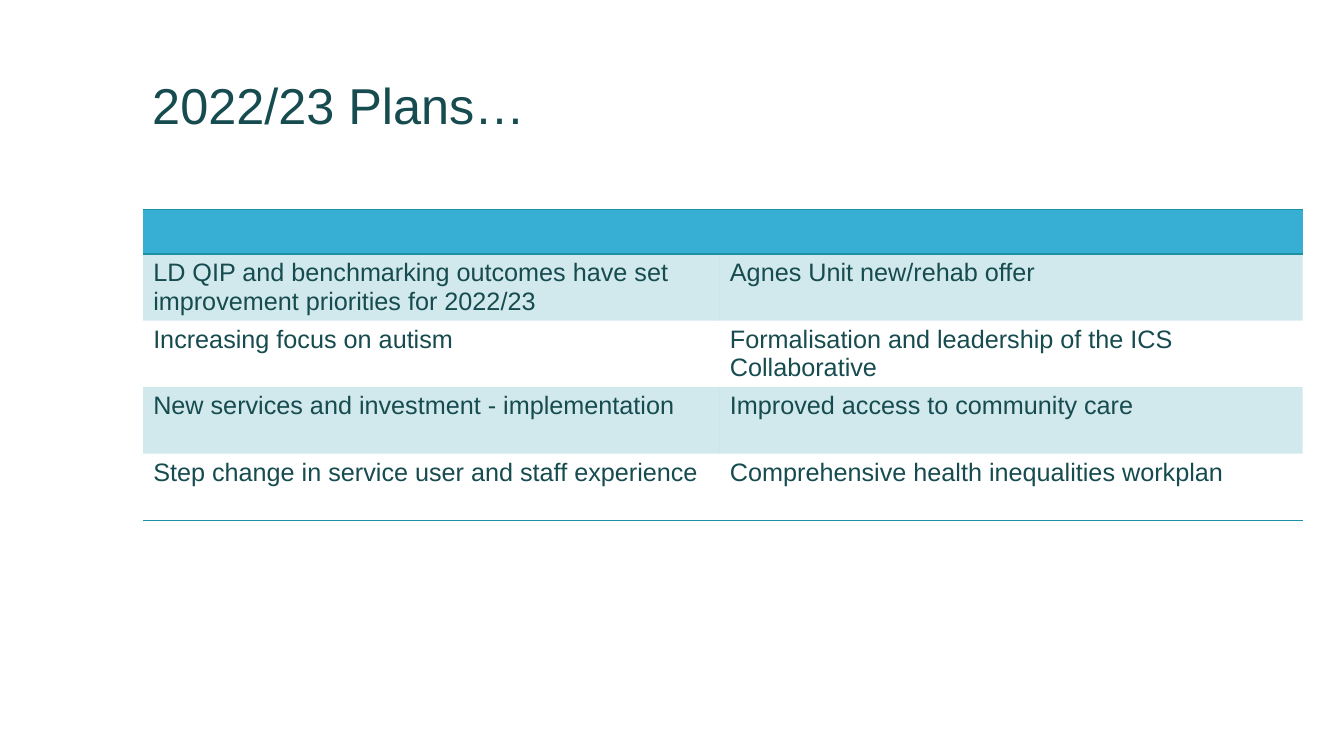
from dataclasses import dataclass

from lxml import etree
from pptx import Presentation
from pptx.dml.color import RGBColor
from pptx.enum import text
from pptx.oxml import ns
from pptx.util import Inches, Pt

TITLE = "2022/23 Plans…"
PLANS = [
    ("", ""),
    ("LD QIP and benchmarking outcomes have set improvement priorities for 2022/23",
     "Agnes Unit new/rehab offer"),
    ("Increasing focus on autism",
     "Formalisation and leadership of the ICS Collaborative"),
    ("New services and investment - implementation",
     "Improved access to community care"),
    ("Step change in service user and staff experience",
     "Comprehensive health inequalities workplan"),
]
COLUMN_WIDTHS = (5.72, 5.78)
HEADER_HEIGHT, ROW_HEIGHT = 0.44, 0.66
PLAIN_TABLE_STYLE = "{2D5ABB26-0587-4C30-8999-92F81FD0307C}"


@dataclass(frozen=True)
class Theme:
    font: str = "Arial"
    ink: str = "164B4F"
    header: str = "37AFD5"
    accent: str = "1B91A1"
    band_opacity: int = 20
    title_size: int = 36
    body_size: int = 18


THEME = Theme()


def write_text(frame, content, *, size, line_spacing=None):
    paragraph = frame.paragraphs[0]
    paragraph.alignment = text.PP_ALIGN.LEFT
    paragraph.line_spacing = line_spacing
    paragraph.font.size = Pt(size)
    if content:
        run = paragraph.add_run()
        run.text = content
        run.font.name = THEME.font
        run.font.size = Pt(size)
        run.font.color.rgb = RGBColor.from_string(THEME.ink)


def add_border(cell, side):
    """Draw a one-point rule on a side, "T" or "B"; call before filling the cell."""
    properties = cell._tc.get_or_add_tcPr()
    line = etree.SubElement(properties, ns.qn(f"a:ln{side}"), w=str(Pt(1)))
    fill = etree.SubElement(line, ns.qn("a:solidFill"))
    etree.SubElement(fill, ns.qn("a:srgbClr"), val=THEME.accent)


def fill_cell(cell, color, opacity=100):
    cell.fill.solid()
    cell.fill.fore_color.rgb = RGBColor.from_string(color)
    if opacity < 100:
        color_element = cell._tc.tcPr.find(".//" + ns.qn("a:solidFill") + "[last()]/" + ns.qn("a:srgbClr"))
        etree.SubElement(color_element, ns.qn("a:alpha"), val=str(opacity * 1000))


def add_title(slide):
    title = slide.shapes.title
    title.left, title.top = Inches(1.41), Inches(0.42)
    title.width, title.height = Inches(10.5), Inches(0.97)
    title.text_frame.word_wrap = True
    title.text_frame.auto_size = text.MSO_AUTO_SIZE.NONE
    title.text_frame.vertical_anchor = text.MSO_ANCHOR.BOTTOM
    write_text(title.text_frame, TITLE, size=THEME.title_size, line_spacing=0.9)


def add_plans_table(slide):
    last_row = len(PLANS) - 1
    frame = slide.shapes.add_table(
        len(PLANS), len(COLUMN_WIDTHS), Inches(1.42), Inches(2.08),
        Inches(sum(COLUMN_WIDTHS)), Inches(HEADER_HEIGHT + last_row * ROW_HEIGHT))
    table = frame.table
    table.horz_banding = False
    table._tbl.tblPr.find(ns.qn("a:tableStyleId")).text = PLAIN_TABLE_STYLE
    for column, width in zip(table.columns, COLUMN_WIDTHS):
        column.width = Inches(width)
    for index, plans in enumerate(PLANS):
        table.rows[index].height = Inches(ROW_HEIGHT if index else HEADER_HEIGHT)
        for cell, plan in zip(table.rows[index].cells, plans):
            write_text(cell.text_frame, plan, size=THEME.body_size)
            if index == 0:
                add_border(cell, "T")
            if index in (0, last_row):
                add_border(cell, "B")
            if index == 0:
                fill_cell(cell, THEME.header)
            elif index % 2:
                fill_cell(cell, THEME.accent, THEME.band_opacity)
            else:
                cell.fill.background()


def main():
    presentation = Presentation()
    presentation.slide_width, presentation.slide_height = Inches(13.33), Inches(7.5)
    slide = presentation.slides.add_slide(presentation.slide_layouts[5])
    add_title(slide)
    add_plans_table(slide)
    presentation.save("out.pptx")


if __name__ == "__main__":
    main()
